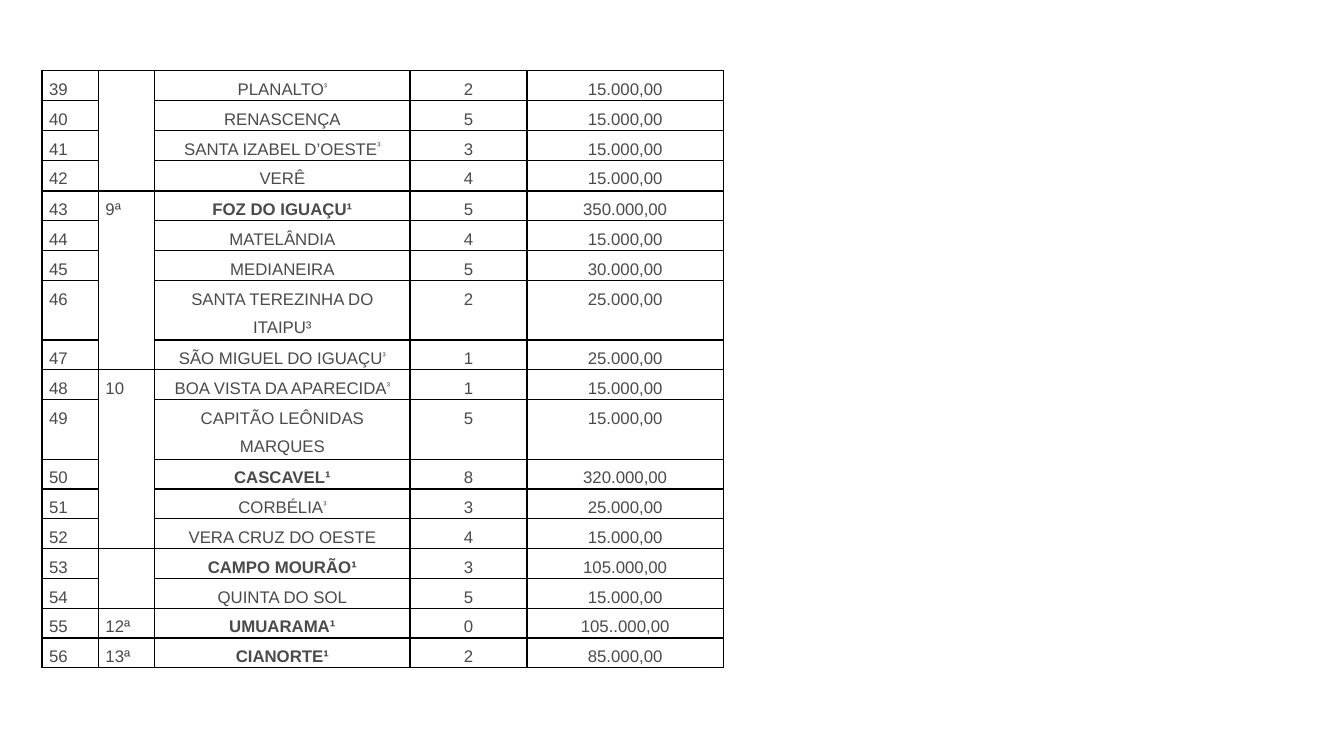
from lxml import etree
from pptx import Presentation
from pptx.dml.color import RGBColor
from pptx.enum import text
from pptx.oxml import ns
from pptx.util import Inches, Pt

# number, municipality, count, amount; "^" precedes a raised mark
MUNICIPALITIES = [
    ("39", "PLANALTO^³", "2", "15.000,00"),
    ("40", "RENASCENÇA", "5", "15.000,00"),
    ("41", "SANTA IZABEL D’OESTE^³", "3", "15.000,00"),
    ("42", "VERÊ", "4", "15.000,00"),
    ("43", "FOZ DO IGUAÇU¹", "5", "350.000,00"),
    ("44", "MATELÂNDIA", "4", "15.000,00"),
    ("45", "MEDIANEIRA", "5", "30.000,00"),
    ("46", "SANTA TEREZINHA DO ITAIPU³", "2", "25.000,00"),
    ("47", "SÃO MIGUEL DO IGUAÇU^³", "1", "25.000,00"),
    ("48", "BOA VISTA DA APARECIDA^³", "1", "15.000,00"),
    ("49", "CAPITÃO LEÔNIDAS MARQUES", "5", "15.000,00"),
    ("50", "CASCAVEL¹", "8", "320.000,00"),
    ("51", "CORBÉLIA^³", "3", "25.000,00"),
    ("52", "VERA CRUZ DO OESTE", "4", "15.000,00"),
    ("53", "CAMPO MOURÃO¹", "3", "105.000,00"),
    ("54", "QUINTA DO SOL", "5", "15.000,00"),
    ("55", "UMUARAMA¹", "0", "105..000,00"),
    ("56", "CIANORTE¹", "2", "85.000,00"),
]
# region label, number of municipalities
REGIONS = [("", 4), ("9ª", 5), ("10", 5), ("", 2), ("12ª", 1), ("13ª", 1)]
TWO_LINE_NUMBERS = {"46", "49"}
COLUMN_WIDTHS = [0.56, 0.56, 2.53, 1.16, 1.95]
LEFT, TOP, HEIGHT = Pt(30), Pt(50.5), 5.92

CELL = {"margin_left": Inches(0.07), "margin_right": Inches(0.07),
        "margin_top": 0, "margin_bottom": 0,
        "vertical_anchor": text.MSO_ANCHOR.TOP}
PARAGRAPH = {"line_spacing": 1.5, "space_after": Pt(10.7)}
FONT = {"name": "Arial", "size": Pt(12)}
JUSTIFIED, CENTERED = text.PP_ALIGN.JUSTIFY, text.PP_ALIGN.CENTER


def apply(target, values):
    for name, value in values.items():
        setattr(target, name, value)


def color(hex_code):
    return RGBColor.from_string(hex_code)


def add_borders(cell):
    properties = cell._tc.get_or_add_tcPr()
    for position, side in enumerate(("lnL", "lnR", "lnT", "lnB")):
        line = etree.Element(ns.qn("a:" + side), w=str(Pt(1)))
        fill = etree.SubElement(line, ns.qn("a:solidFill"))
        etree.SubElement(fill, ns.qn("a:srgbClr"), val="000000")
        properties.insert(position, line)


def write(cell, content, alignment):
    paragraph = cell.text_frame.paragraphs[0]
    apply(paragraph, PARAGRAPH)
    paragraph.alignment = alignment
    for index, part in enumerate(content.split("^")):
        run = paragraph.add_run()
        run.text = part
        apply(run.font, FONT)
        run.font.bold = content.endswith("¹")
        run.font.color.rgb = color("4A4A4A")
        if index:
            run.font._element.set("baseline", "30000")


def main():
    deck = Presentation()
    deck.slide_width, deck.slide_height = Inches(13.33), Inches(7.5)
    slide = deck.slides.add_slide(deck.slide_layouts[6])
    table = slide.shapes.add_table(
        len(MUNICIPALITIES), len(COLUMN_WIDTHS), LEFT, TOP,
        Inches(sum(COLUMN_WIDTHS)), Inches(HEIGHT)).table
    apply(table, {"first_row": False, "horz_banding": False})
    for column, width in zip(table.columns, COLUMN_WIDTHS):
        column.width = Inches(width)
    for cell in table.iter_cells():
        apply(cell, CELL)
        cell.fill.background()
        add_borders(cell)

    line_height = HEIGHT / (len(MUNICIPALITIES) + len(TWO_LINE_NUMBERS))
    for row, (number, *details) in enumerate(MUNICIPALITIES):
        lines = 2 if number in TWO_LINE_NUMBERS else 1
        table.rows[row].height = Inches(lines * line_height)
        write(table.cell(row, 0), number, JUSTIFIED)
        for column, detail in enumerate(details, start=2):
            write(table.cell(row, column), detail, CENTERED)

    first = 0
    for region, count in REGIONS:
        cell = table.cell(first, 1)
        if count > 1:
            cell.merge(table.cell(first + count - 1, 1))
        if region:
            write(cell, region, JUSTIFIED)
        first += count

    deck.save("out.pptx")


if __name__ == "__main__":
    main()
